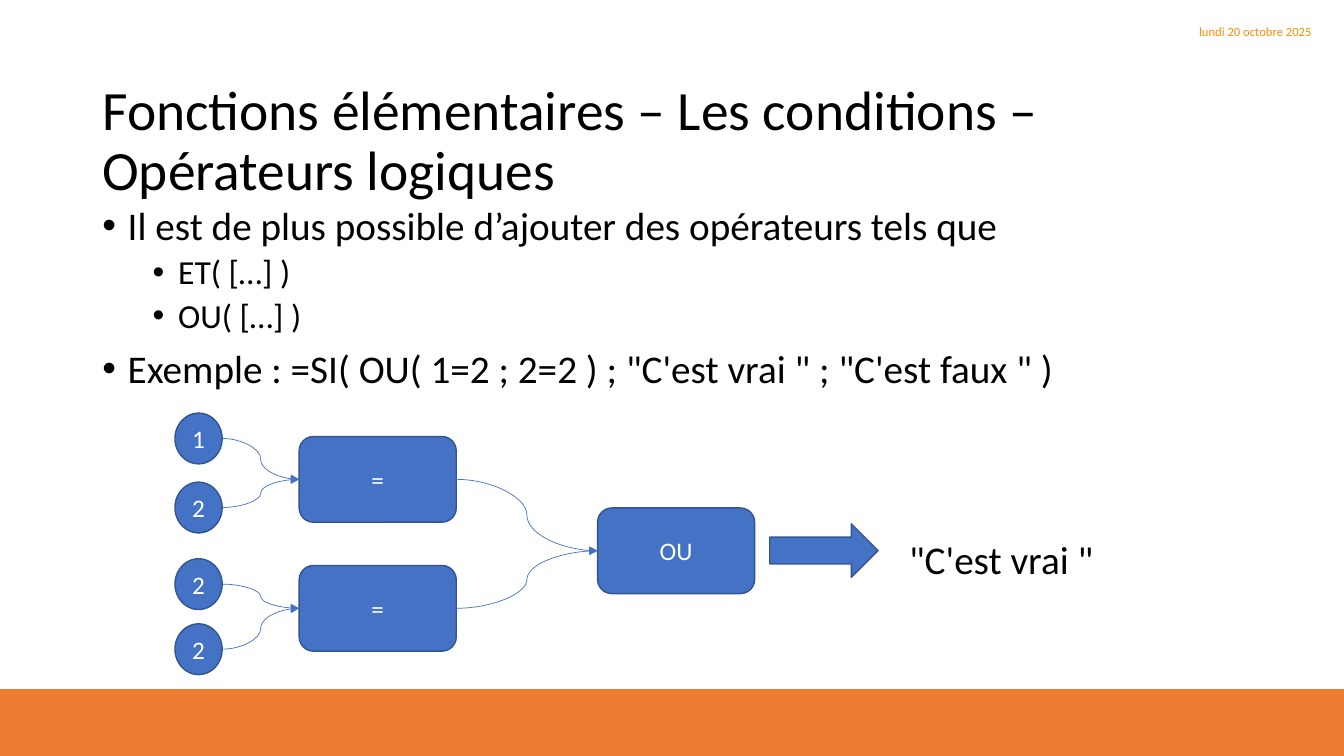
"""Slide on the logical operators ET and OU, with a diagram of the evaluation."""
from lxml import etree
from pptx import Presentation
from pptx.dml.color import RGBColor
from pptx.enum.shapes import MSO_CONNECTOR, MSO_SHAPE
from pptx.enum.text import MSO_ANCHOR, PP_ALIGN
from pptx.oxml.ns import qn
from pptx.util import Cm, Pt

RECT, ROUNDED = MSO_SHAPE.RECTANGLE, MSO_SHAPE.ROUNDED_RECTANGLE
OVAL, ARROW = MSO_SHAPE.OVAL, MSO_SHAPE.RIGHT_ARROW
CURVE = MSO_CONNECTOR.CURVE
TOP, MIDDLE = MSO_ANCHOR.TOP, MSO_ANCHOR.MIDDLE
LEFT, CENTER, RIGHT = PP_ALIGN.LEFT, PP_ALIGN.CENTER, PP_ALIGN.RIGHT
RIGHT_SIDE, LEFT_SIDE = 3, 1


class Slide:
    """Hold the style and the current slide."""

    FONT = "Calibri"
    COLORS = {"text": "000000", "date": "FF8E01", "bar": "ED7D31",
              "node": "4472C4", "edge": "325491", "label": "FFFFFF"}

    def __init__(self, prs):
        """Add a blank slide."""
        self.s = prs.slides.add_slide(prs.slide_layouts[6])

    def color(self, name):
        """Return a named colour."""
        return RGBColor.from_string(self.COLORS[name])

    def style(self, p, size, color, align=LEFT):
        """Format a paragraph and its runs."""
        p.alignment = align
        for r in p.runs:
            r.font.name, r.font.size = self.FONT, Pt(size)
            r.font.color.rgb = self.color(color)

    def shape(self, kind, x, y, w, h, text="", fill="node", line="edge"):
        """Add a filled shape with a centred label."""
        sp = self.s.shapes.add_shape(kind, Cm(x), Cm(y), Cm(w), Cm(h))
        sp.shadow.inherit = False
        sp.fill.solid()
        sp.fill.fore_color.rgb = self.color(fill)
        sp.line.color.rgb = self.color(line)
        sp.line.width = Pt(1)
        if text:
            tf = sp.text_frame
            tf.margin_left = tf.margin_right = 0
            tf.vertical_anchor = MIDDLE
            tf.text = text
            self.style(tf.paragraphs[0], 18, "label", CENTER)
        return sp

    def text(self, x, y, w, h, text, size, color="text", align=LEFT,
             anchor=TOP, wrap=True, spacing=1.0):
        """Add a text box with one paragraph."""
        tf = self.s.shapes.add_textbox(Cm(x), Cm(y), Cm(w), Cm(h)).text_frame
        tf.word_wrap, tf.vertical_anchor = wrap, anchor
        tf.text = text
        tf.paragraphs[0].line_spacing = spacing
        self.style(tf.paragraphs[0], size, color, align)

    def bullets(self, x, y, w, h, items):
        """Add a bulleted list from pairs of level and text."""
        tf = self.s.shapes.add_textbox(Cm(x), Cm(y), Cm(w), Cm(h)).text_frame
        tf.word_wrap = True
        for i, (level, text) in enumerate(items):
            p = tf.add_paragraph() if i else tf.paragraphs[0]
            p.text, p.level, p.line_spacing = text, level, 0.9
            p.space_before = Pt((5 if level else 10) if i else 0)
            pPr = p._p.get_or_add_pPr()
            pPr.set("marL", str(Cm(0.64 + 1.27 * level)))
            pPr.set("indent", str(-Cm(0.64)))
            etree.SubElement(pPr, qn("a:buFont")).set("typeface", "Arial")
            etree.SubElement(pPr, qn("a:buChar")).set("char", "•")
            self.style(p, 24 if level else 28, "text")

    def curve(self, start, end):
        """Link the right side of a shape to the left side of a box."""
        c = self.s.shapes.add_connector(
            CURVE, start.left + start.width, start.top + start.height // 2,
            end.left, end.top + end.height // 2)
        if start.auto_shape_type == ROUNDED:
            c.begin_connect(start, RIGHT_SIDE)
        c.end_connect(end, LEFT_SIDE)
        c.line.color.rgb = self.color("node")
        c.line.width = Pt(0.5)
        etree.SubElement(c.line._get_or_add_ln(), qn("a:tailEnd")).set("type", "triangle")
        etree.SubElement(c._element.spPr, qn("a:effectLst"))


def main():
    """Build and save the slide."""
    prs = Presentation()
    prs.slide_width, prs.slide_height = Cm(33.87), Cm(19.05)
    s = Slide(prs)

    s.shape(RECT, 0, 17.37, 33.87, 1.68, fill="bar", line="bar")
    s.text(28.7, 0.53, 4.6, 0.53, "lundi 20 octobre 2025", 9, "date", RIGHT, MIDDLE)
    s.text(2.33, 2.49, 29.21, 2.2,
           "Fonctions élémentaires – Les conditions – Opérateurs logiques",
           39.6, anchor=MIDDLE, spacing=0.9)
    s.bullets(2.33, 5.08, 29.21, 12.09, [
        (0, "Il est de plus possible d’ajouter des opérateurs tels que"),
        (1, "ET( […] )"),
        (1, "OU( […] )"),
        (0, "Exemple : =SI( OU( 1=2 ; 2=2 ) ; \"C'est vrai \" ; \"C'est faux \" )"),
    ])

    box_w, box_h = 3.96, 2.16
    either = s.shape(ROUNDED, 15.06, 12.8, box_w, box_h, "OU")
    tests = [(11, [("1", 10.41), ("2", 12.15)]),
             (14.25, [("2", 14.08), ("2", 15.72)])]
    for box_y, values in tests:
        equal = s.shape(ROUNDED, 7.54, box_y, box_w, box_h, "=")
        for value, y in values:
            s.curve(s.shape(OVAL, 4.41, y, 1.19, 1.28, value), equal)
        s.curve(equal, either)

    s.shape(ARROW, 19.4, 13.2, 2.73, 1.35)
    s.text(22.66, 13.36, 5.21, 1.45, "\"C'est vrai \"", 28, wrap=False)

    prs.save("out.pptx")


if __name__ == "__main__":
    main()
